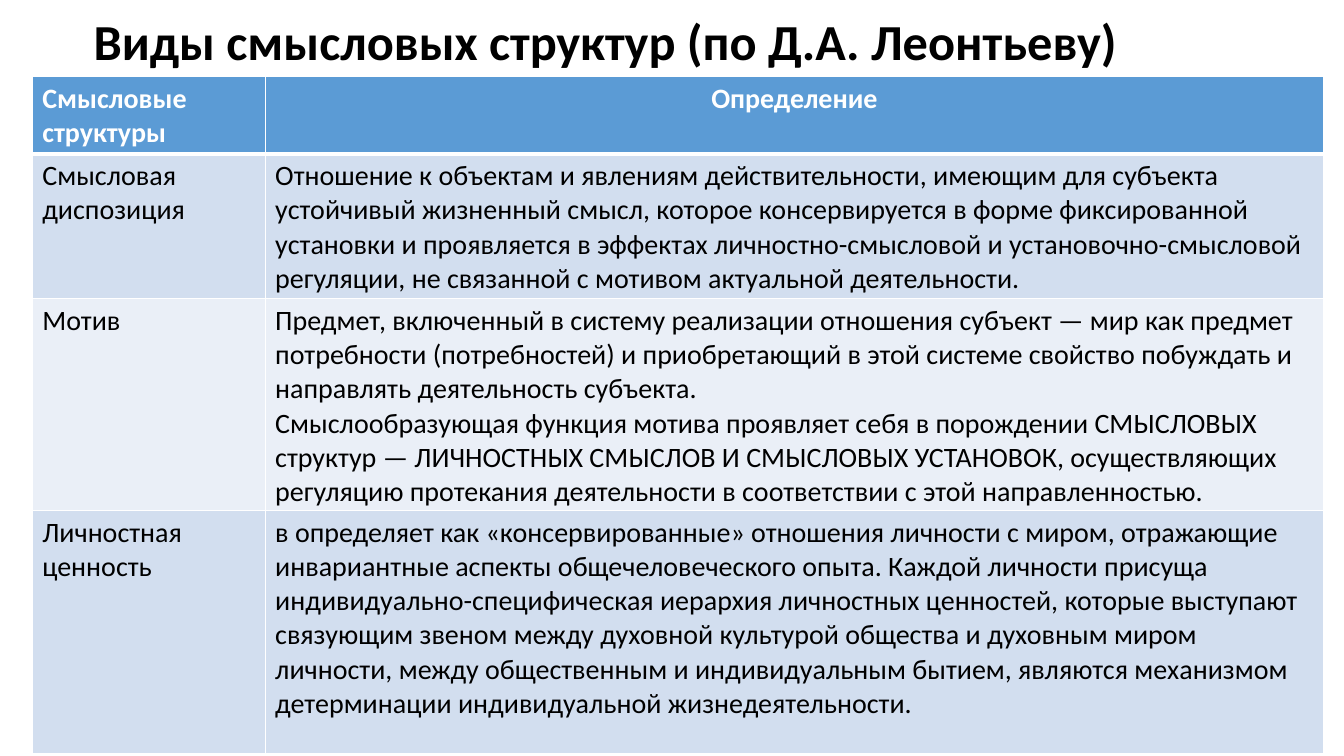
from lxml import etree
from pptx import Presentation
from pptx import util as u
from pptx.dml.color import RGBColor
from pptx.enum import text
from pptx.oxml.ns import qn

COLORS = {"ink": "000000", "white": "FFFFFF", "header": "5B9BD5",
          "odd": "D2DEEF", "even": "EAEFF7"}
FONT = "Calibri"

STRUCTURES = [
    ("Смысловые структуры", "Определение"),
    ("Смысловая диспозиция",
     "Отношение к объектам и явлениям действительности, имеющим для субъекта "
     "устойчивый жизненный смысл, которое консервируется в форме фиксированной "
     "установки и проявляется в эффектах личностно-смысловой и "
     "установочно-смысловой регуляции, не связанной с мотивом актуальной "
     "деятельности."),
    ("Мотив",
     "Предмет, включенный в систему реализации отношения субъект — мир как "
     "предмет потребности (потребностей) и приобретающий в этой системе "
     "свойство побуждать и направлять деятельность субъекта.\n"
     "Смыслообразующая функция мотива проявляет себя в порождении СМЫСЛОВЫХ "
     "структур — ЛИЧНОСТНЫХ СМЫСЛОВ И СМЫСЛОВЫХ УСТАНОВОК, осуществляющих "
     "регуляцию протекания деятельности в соответствии с этой "
     "направленностью."),
    ("Личностная ценность",
     "в определяет как «консервированные» отношения личности с миром, "
     "отражающие инвариантные аспекты общечеловеческого опыта. Каждой личности "
     "присуща индивидуально-специфическая иерархия личностных ценностей, "
     "которые выступают связующим звеном между духовной культурой общества и "
     "духовным миром личности, между общественным и индивидуальным бытием, "
     "являются механизмом детерминации индивидуальной жизнедеятельности."),
]
COLUMN_WIDTHS = [2.31, 10.5]
ROW_HEIGHTS = [0.74, 1.37, 2.01, 2.41]


def style_text(frame, size, color, bold):
    for paragraph in frame.paragraphs:
        for run in paragraph.runs:
            run.font.name = FONT
            run.font.size = u.Pt(size)
            run.font.bold = bold
            run.font.color.rgb = RGBColor.from_string(COLORS[color])


def add_border(cell, side, points):
    line = etree.SubElement(cell._tc.get_or_add_tcPr(), qn(f"a:ln{side}"),
                            w=str(u.Pt(points)))
    fill = etree.SubElement(line, qn("a:solidFill"))
    etree.SubElement(fill, qn("a:srgbClr"), val=COLORS["white"])


prs = Presentation()
prs.slide_width, prs.slide_height = u.Inches(13.33), u.Inches(7.5)
slide = prs.slides.add_slide(prs.slide_layouts[6])

# Title
title = slide.shapes.add_textbox(u.Inches(0.83), u.Inches(0.17),
                                 u.Inches(11.5), u.Inches(0.54)).text_frame
title.word_wrap = True
title.vertical_anchor = text.MSO_ANCHOR.MIDDLE
title.text = "Виды смысловых структур (по Д.А. Леонтьеву)"
title.paragraphs[0].line_spacing = 0.9
style_text(title, 36, "ink", True)

# Table of structures and their definitions
definitions = slide.shapes.add_table(
    len(ROW_HEIGHTS), len(COLUMN_WIDTHS), u.Inches(0.32), u.Inches(0.76),
    u.Inches(sum(COLUMN_WIDTHS)), u.Inches(sum(ROW_HEIGHTS))).table
for column, width in zip(definitions.columns, COLUMN_WIDTHS):
    column.width = u.Inches(width)
for row, height in zip(definitions.rows, ROW_HEIGHTS):
    row.height = u.Inches(height)

for r, entry in enumerate(STRUCTURES):
    is_header = r == 0
    band = "header" if is_header else "odd" if r % 2 else "even"
    for c, wording in enumerate(entry):
        cell = definitions.cell(r, c)
        cell.text_frame.text = wording
        style_text(cell.text_frame, 20, "white" if is_header else "ink", is_header)
        for side in "LRTB":
            # The rule between header and body is thicker
            thick = (r, side) in ((0, "B"), (1, "T"))
            add_border(cell, side, 3 if thick else 1)
        cell.fill.solid()
        cell.fill.fore_color.rgb = RGBColor.from_string(COLORS[band])
definitions.cell(0, 1).text_frame.paragraphs[0].alignment = text.PP_ALIGN.CENTER

prs.save("out.pptx")
